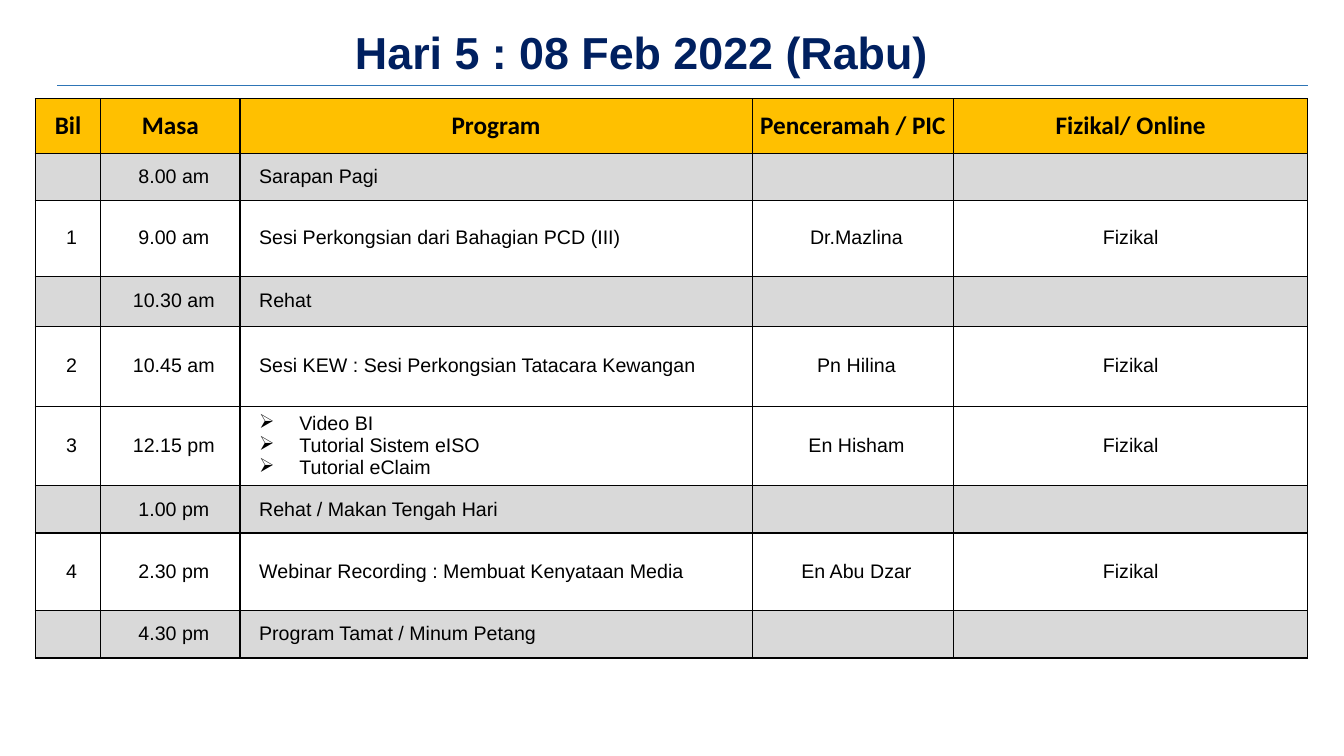
"""Build the day 5 programme slide: a title, a rule and the timetable."""
import pptx
import pptx.util
import pptx.dml.color
import pptx.enum.shapes
import pptx.enum.text
import pptx.oxml
import pptx.oxml.ns
import lxml.etree

Inches, Pt = pptx.util.Inches, pptx.util.Pt
RGB = pptx.dml.color.RGBColor.from_string
ALIGN = pptx.enum.text.PP_ALIGN
MIDDLE = pptx.enum.text.MSO_ANCHOR.MIDDLE
THEME = {
    "title": {"name": "Arial", "size": Pt(32), "bold": True, "color": "002060"},
    "header": {"name": "Calibri", "size": Pt(18), "bold": True, "color": "000000"},
    "body": {"name": "Arial", "size": Pt(14), "bold": False, "color": "000000"},
    "header_fill": "FFC000",
    "break_fill": "D9D9D9",
    "session_fill": "FFFFFF",
    "border": "000000",
    "rule": "2E75B6",
}
COLUMNS = [
    ("Bil", 0.65, 0.07), ("Masa", 1.38, 0.07), ("Program", 5.08, 0.19),
    ("Penceramah / PIC", 2, 0.07), ("Fizikal/ Online", 3.51, 0),
]
ROWS = [
    (0.47, ["", "8.00 am", "Sarapan Pagi", "", ""]),
    (0.75, ["1", "9.00 am", "Sesi Perkongsian dari Bahagian PCD (III)", "Dr.Mazlina", "Fizikal"]),
    (0.5, ["", "10.30 am", "Rehat", "", ""]),
    (0.79, ["2", "10.45 am", "Sesi KEW : Sesi Perkongsian Tatacara Kewangan", "Pn Hilina", "Fizikal"]),
    (0.79, ["3", "12.15 pm", "Video BI\nTutorial Sistem eISO\nTutorial eClaim", "En Hisham", "Fizikal"]),
    (0.47, ["", "1.00 pm", "Rehat / Makan Tengah Hari", "", ""]),
    (0.77, ["4", "2.30 pm", "Webinar Recording : Membuat Kenyataan Media", "En Abu Dzar", "Fizikal"]),
    (0.47, ["", "4.30 pm", "Program Tamat / Minum Petang", "", ""]),
]


def write(p, text, style, align):
    p.alignment = align
    r = p.add_run()
    r.text = text
    for key, value in THEME[style].items():
        if key == "color":
            r.font.color.rgb = RGB(value)
        else:
            setattr(r.font, key, value)


def format_cell(cell, fill):
    tcPr = cell._tc.get_or_add_tcPr()
    for i, side in enumerate(("lnL", "lnR", "lnT", "lnB")):
        tcPr.insert(i, pptx.oxml.parse_xml(
            f'<a:{side} {pptx.oxml.ns.nsdecls("a")} w="12700"><a:solidFill>'
            f'<a:srgbClr val="{THEME["border"]}"/></a:solidFill></a:{side}>'))
    cell.fill.solid()
    cell.fill.fore_color.rgb = RGB(THEME[fill])
    for side in ("left", "top", "right", "bottom"):
        setattr(cell, f"margin_{side}", 0)
    cell.vertical_anchor = MIDDLE


prs = pptx.Presentation()
prs.slide_width, prs.slide_height = Inches(13.33), Inches(7.5)
s = prs.slides.add_slide(prs.slide_layouts[5])

rule = s.shapes.add_connector(
    pptx.enum.shapes.MSO_CONNECTOR.STRAIGHT,
    Inches(0.57), Inches(0.85), Inches(12.97), Inches(0.85))
rule.line.color.rgb = RGB(THEME["rule"])
rule.line.width = Pt(0.5)
lxml.etree.SubElement(rule._element.spPr, pptx.oxml.ns.qn("a:effectLst"))

title = s.shapes.title
title.left, title.top, title.width, title.height = map(Inches, (1.9, 0.24, 8.93, 0.54))
title.text_frame.vertical_anchor = MIDDLE
write(title.text_frame.paragraphs[0], "Hari 5 : 08 Feb 2022 (Rabu)", "title", ALIGN.CENTER)

table = s.shapes.add_table(
    len(ROWS) + 1, len(COLUMNS),
    Inches(0.35), Inches(0.98), Inches(12.62), Inches(5.55)).table
table.horz_banding = False

table.rows[0].height = Inches(0.54)
for col, (heading, width, indent) in enumerate(COLUMNS):
    table.columns[col].width = Inches(width)
    cell = table.cell(0, col)
    format_cell(cell, "header_fill")
    write(cell.text_frame.paragraphs[0], heading, "header", ALIGN.CENTER)

for row, (height, texts) in enumerate(ROWS, 1):
    table.rows[row].height = Inches(height)
    fill = "session_fill" if texts[0] else "break_fill"
    for col, text in enumerate(texts):
        cell = table.cell(row, col)
        format_cell(cell, fill)
        if not text:
            continue
        heading, width, indent = COLUMNS[col]
        lines = text.split("\n")
        tf = cell.text_frame
        for i, line in enumerate(lines):
            p = tf.add_paragraph() if i else tf.paragraphs[0]
            write(p, line, "body", ALIGN.LEFT if heading == "Program" else ALIGN.CENTER)
            pPr = p._p.get_or_add_pPr()
            if len(lines) > 1:
                pPr.set("marL", str(Inches(indent + 0.4)))
                pPr.set("indent", str(Inches(-0.4)))
                bullet = lxml.etree.SubElement(pPr, pptx.oxml.ns.qn("a:buChar"))
                bullet.set("char", "➢")
            else:
                pPr.set("marL", str(Inches(indent)))
                p.line_spacing = Pt(15.5)

prs.save("out.pptx")
